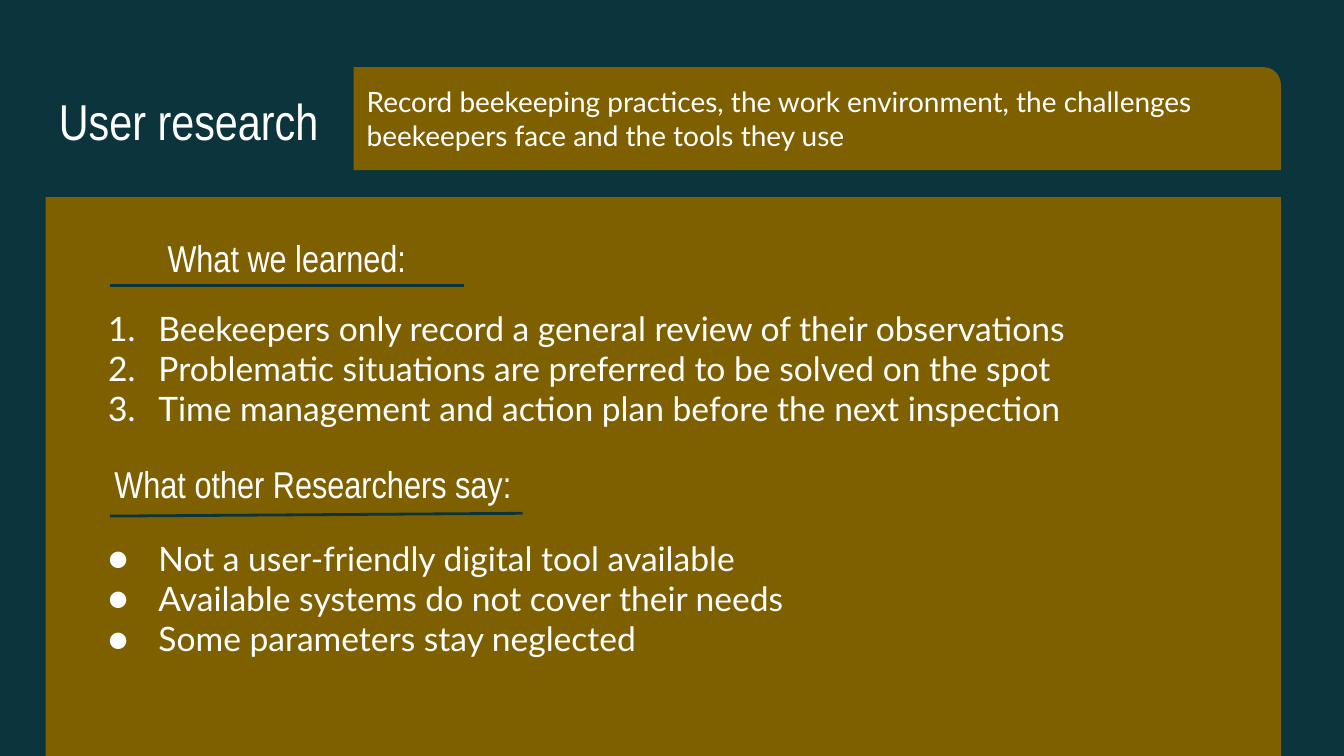
"""Build the user research slide of a beekeeping project."""
from lxml import etree
from pptx import Presentation
from pptx import util as u
from pptx.dml.color import RGBColor
from pptx.enum import shapes, text
from pptx.oxml import ns

NIGHT = RGBColor(0x0C, 0x34, 0x3D)
HONEY = RGBColor(0x7F, 0x60, 0x00)
WHITE = RGBColor(0xFF, 0xFF, 0xFF)
HEADING_FONT = "Arial Narrow"
BODY_FONT = "Lato"
INSET = 7.2
LIST_INDENT = 36
LIST_HANGING = 27
PANEL_RIGHT = 686.2


def add_panel(slide, kind, left, top, width, height):
    """Add a borderless honey-coloured panel."""
    panel = slide.shapes.add_shape(
        kind, u.Pt(left), u.Pt(top), u.Pt(width), u.Pt(height))
    panel.shadow.inherit = False
    panel.fill.solid()
    panel.fill.fore_color.rgb = HONEY
    panel.line.fill.background()
    return panel


def add_marker(paragraph, tag, **attributes):
    """Give a paragraph a hanging indent and a white list marker."""
    properties = paragraph._p.get_or_add_pPr()
    properties.set("marL", str(u.Pt(LIST_INDENT)))
    properties.set("indent", str(-u.Pt(LIST_HANGING)))
    colour = etree.SubElement(properties, ns.qn("a:buClr"))
    etree.SubElement(colour, ns.qn("a:srgbClr"), val=str(WHITE))
    etree.SubElement(properties, ns.qn("a:buFont"), typeface=BODY_FONT)
    etree.SubElement(properties, ns.qn(tag), **attributes)


def add_text(slide, lines, left, top, width, height, *, size,
             font=BODY_FONT, align=text.PP_ALIGN.LEFT):
    """Add white text, one paragraph per line, and return the paragraphs."""
    box = slide.shapes.add_textbox(
        u.Pt(left), u.Pt(top), u.Pt(width), u.Pt(height))
    frame = box.text_frame
    frame.word_wrap = True
    frame.margin_left = frame.margin_right = u.Pt(INSET)
    frame.margin_top = frame.margin_bottom = u.Pt(INSET)
    frame.text = "\n".join(lines)
    for paragraph in frame.paragraphs:
        paragraph.alignment = align
        for run in paragraph.runs:
            run.font.name = font
            run.font.size = u.Pt(size)
            run.font.color.rgb = WHITE
    return frame.paragraphs


def add_underline(slide, start_x, start_y, end_x, end_y):
    """Add a dark rule below a section heading."""
    rule = slide.shapes.add_connector(
        shapes.MSO_CONNECTOR.STRAIGHT,
        u.Pt(start_x), u.Pt(start_y), u.Pt(end_x), u.Pt(end_y))
    rule.line.color.rgb = NIGHT
    rule.line.width = u.Pt(1.5)
    etree.SubElement(rule._element.spPr, ns.qn("a:effectLst"))


def add_section(slide, heading, heading_box, rule, findings, top,
                marker, **marker_attributes):
    """Add an underlined heading and its list of findings."""
    add_text(slide, [heading], *heading_box, size=20, font=HEADING_FONT,
             align=text.PP_ALIGN.CENTER)
    add_underline(slide, *rule)
    left = 41.8
    for finding in add_text(slide, findings, left, top, PANEL_RIGHT - left,
                            80, size=18):
        add_marker(finding, marker, **marker_attributes)


def main():
    """Compose the slide and save it."""
    deck = Presentation()
    deck.slide_width, deck.slide_height = u.Pt(720), u.Pt(405)
    slide = deck.slides.add_slide(deck.slide_layouts[6])
    slide.background.fill.solid()
    slide.background.fill.fore_color.rgb = NIGHT

    add_text(slide, ["User research"], 24.5, 41, 449, 45.4,
             size=27, font=HEADING_FONT)
    goal_left, findings_left, findings_top = 189.4, 24.5, 105.6
    goal_width = PANEL_RIGHT - goal_left
    add_panel(slide, shapes.MSO_SHAPE.ROUND_1_RECTANGLE,
              goal_left, 36, goal_width, 55.2)
    add_panel(slide, shapes.MSO_SHAPE.RECTANGLE, findings_left, findings_top,
              PANEL_RIGHT - findings_left, 405 - findings_top)
    add_text(slide, ["Record beekeeping practices, the work environment, the "
                     "challenges beekeepers face and the tools they use"],
             goal_left, 38.2, goal_width, 51, size=15)

    add_section(slide, "What we learned:",
                (73.4, 118.8, 160.6, 38.9), (59, 153, 248.4, 153),
                ["Beekeepers only record a general review of their observations",
                 "Problematic situations are preferred to be solved on the spot",
                 "Time management and action plan before the next inspection"],
                157.7, "a:buAutoNum", type="arabicPeriod")
    add_section(slide, "What other Researchers say:",
                (28, 239.8, 279.4, 38.9), (59, 276.5, 280, 275),
                ["Not a user-friendly digital tool available",
                 "Available systems do not cover their needs",
                 "Some parameters stay neglected"],
                280.8, "a:buChar", char="●")
    deck.save("out.pptx")


if __name__ == "__main__":
    main()
